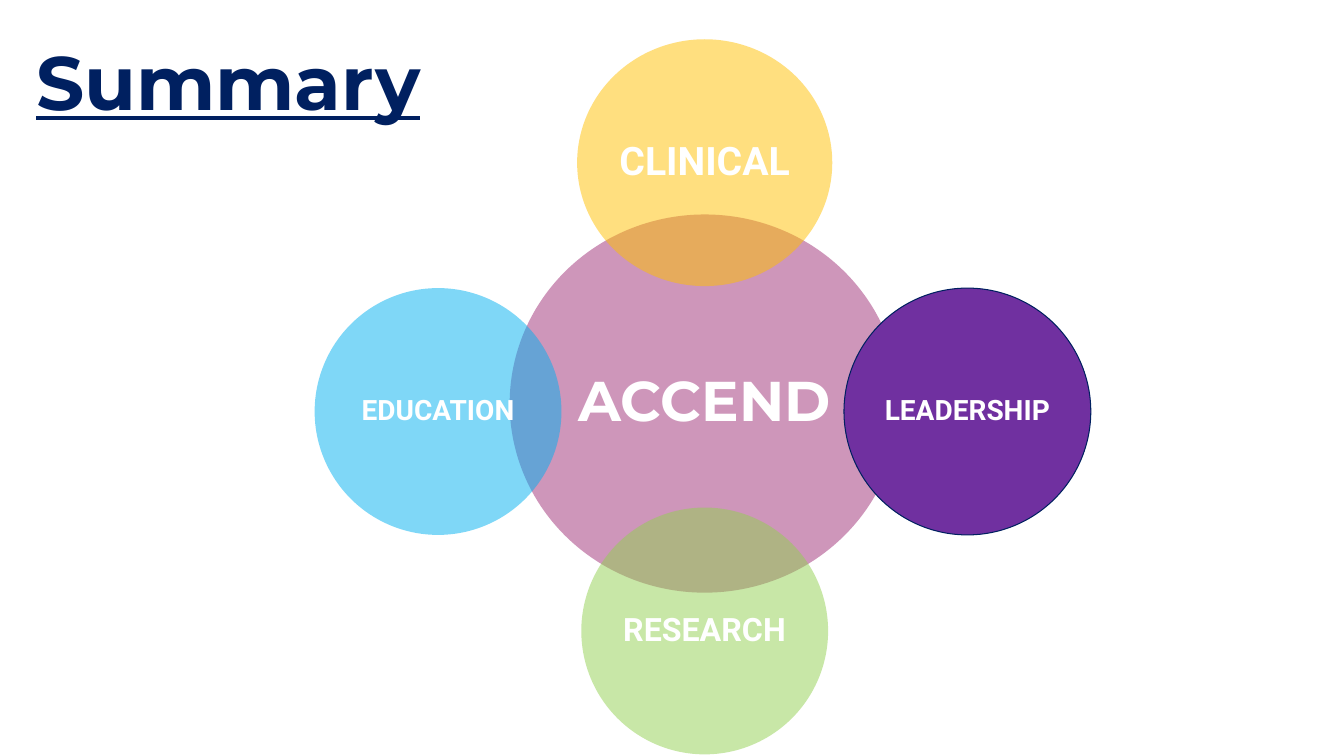
"""Build the summary slide: a central circle with four overlapping pillars."""
from lxml import etree
from pptx import Presentation
from pptx.dml.color import RGBColor
from pptx.enum.shapes import MSO_SHAPE
from pptx.enum.text import MSO_ANCHOR, PP_ALIGN
from pptx.oxml.ns import qn
from pptx.util import Cm, Pt

OVAL = MSO_SHAPE.OVAL
MIDDLE = MSO_ANCHOR.MIDDLE
CENTER = PP_ALIGN.CENTER
NAVY = "002060"
WHITE = "FFFFFF"


def paint(color, code):
    color.rgb = RGBColor.from_string(code)


def write(frame, text, size, face, code):
    frame.word_wrap = True
    frame.vertical_anchor = MIDDLE
    frame.text = text
    para = frame.paragraphs[0]
    para.line_spacing = 0.9
    font = para.runs[0].font
    font.size, font.name, font.bold = Pt(size), face, True
    paint(font.color, code)
    return para


deck = Presentation()
deck.slide_width, deck.slide_height = Cm(33.87), Cm(19.05)
slide = deck.slides.add_slide(deck.slide_layouts[6])

title = slide.shapes.add_textbox(Cm(0.66), Cm(0), Cm(27.05), Cm(4.32))
head = write(title.text_frame, "Summary", 54, "Montserrat", NAVY)
head.runs[0].font.underline = True

MID_X, SIDE_Y, SMALL = 17.76, 10.37, 6.22
circles = [
    ("ACCEND", MID_X, 10.17, 9.83, 9.53, "9E2E76", 40, "Montserrat", 0.15),
    ("CLINICAL", MID_X, 4.1, 6.43, SMALL, "FFC000", 28, "Roboto", 0.1),
    ("LEADERSHIP", 24.38, SIDE_Y, SMALL, SMALL, "7030A0", 20, "Roboto", 0.08),
    ("RESEARCH", MID_X, 15.9, SMALL, SMALL, "92D050", 23, "Roboto", 0.08),
    ("EDUCATION", 11.04, SIDE_Y, SMALL, SMALL, "00B0F0", 20, "Roboto", 0.08),
]

for label, x, y, width, height, code, size, face, inset in circles:
    oval = slide.shapes.add_shape(
        OVAL, Cm(x - width / 2), Cm(y - height / 2), Cm(width), Cm(height))
    oval.shadow.inherit = False
    oval.fill.solid()
    paint(oval.fill.fore_color, code)
    if label == "LEADERSHIP":
        paint(oval.line.color, NAVY)
        oval.line.width = Pt(0.75)
    else:
        oval.line.fill.background()
        tint = oval.element.spPr.find(qn("a:solidFill"))[0]
        etree.SubElement(tint, qn("a:alpha"), val="50000")
    frame = oval.text_frame
    frame.margin_left = frame.margin_right = Cm(inset)
    frame.margin_top = frame.margin_bottom = Cm(inset)
    write(frame, label, size, face, WHITE).alignment = CENTER

deck.save("out.pptx")
